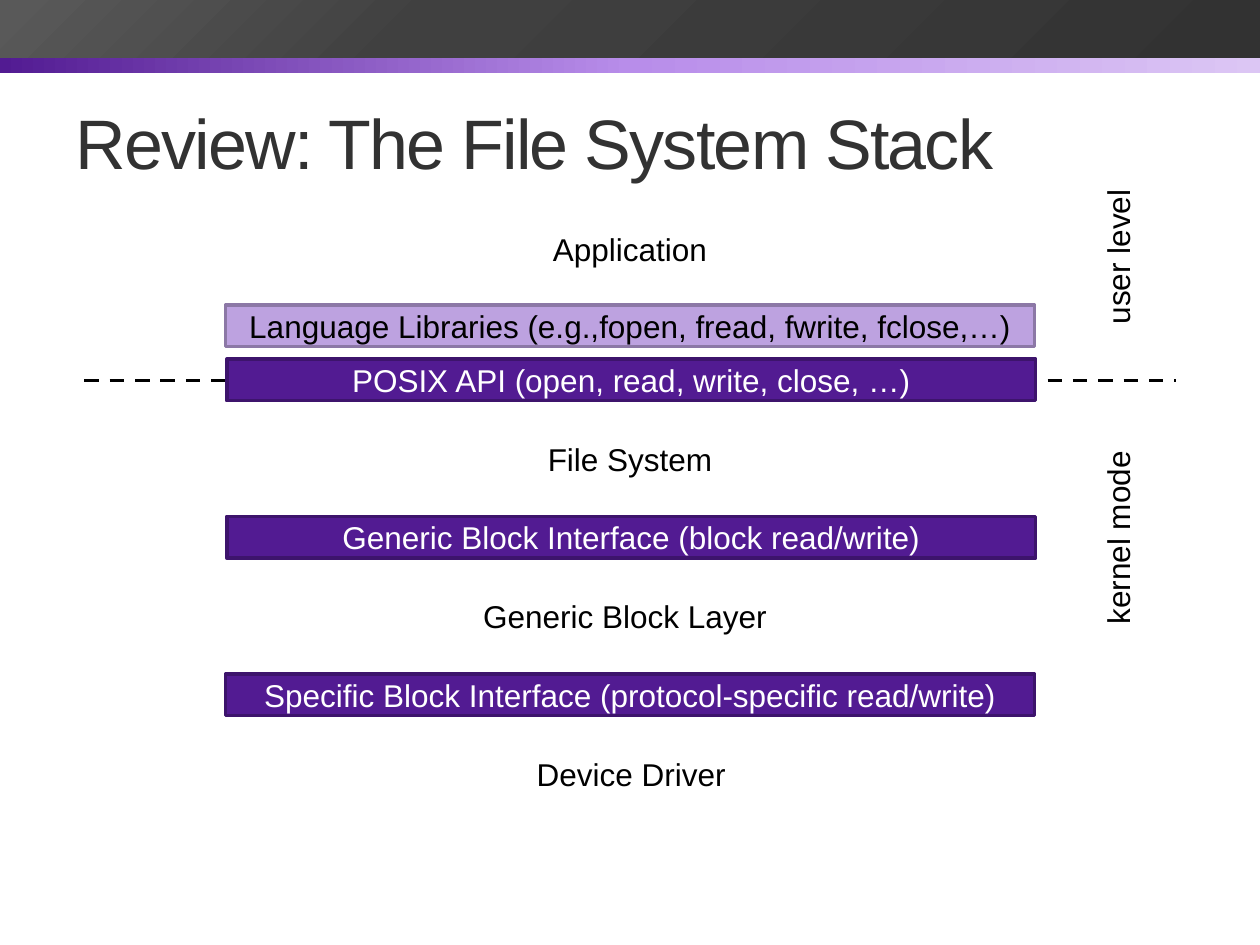
from typing import NamedTuple

from lxml import etree
from pptx import Presentation, util as u
from pptx.dml.color import RGBColor
from pptx.enum import dml, shapes, text
from pptx.oxml import parse_xml
from pptx.oxml.ns import nsdecls, qn

FONT = "Arial"
BLACK, WHITE, CHARCOAL = "000000", "FFFFFF", "323232"
PURPLE, DARK_PURPLE = "521B92", "3D146C"
LILAC, DARK_LILAC = "BDA2E0", "8C78A6"
LINE_WIDTH = u.Pt(2.08)
BAR_WIDTH, BAR_HEIGHT = 6.42, 0.33
LABEL_HEIGHT = 0.4


class Band(NamedTuple):
    top: float
    height: float
    angle: int
    stops: list[tuple[int, str]]


class Interface(NamedTuple):
    left: float
    top: float
    caption: str
    fill: str = PURPLE
    line: str = DARK_PURPLE
    color: str = WHITE


class Label(NamedTuple):
    center: float
    top: float
    width: float
    caption: str
    rotation: int = 0


BANDS = [
    Band(0.24, 0.34, 0, [(0, PURPLE), (50, "B88DEA"), (100, "DCC6F4")]),
    Band(0, 0.46, 225, [(0, CHARCOAL), (66, "404040"), (99, "595959")]),
]
INTERFACES = [
    Interface(1.8, 2.85, "POSIX API (open, read, write, close, …)"),
    Interface(1.8, 4.1, "Generic Block Interface (block read/write)"),
    Interface(1.79, 5.35, "Specific Block Interface (protocol-specific read/write)"),
    Interface(1.79, 2.42, "Language Libraries (e.g.,fopen, fread, fwrite, fclose,…)",
              LILAC, DARK_LILAC, BLACK),
]
LABELS = [
    Label(5, 1.78, 1.44, "Application"),
    Label(5, 3.44, 1.52, "File System"),
    Label(4.96, 4.69, 2.47, "Generic Block Layer"),
    Label(5.01, 5.94, 1.72, "Device Driver"),
    Label(8.87, 1.84, 1.28, "user level", 270),
    Label(8.87, 4.07, 1.59, "kernel mode", 270),
]


def rgb(color: str) -> RGBColor:
    return RGBColor.from_string(color)


def write(shape, caption: str, color: str, size: int = 18, align=text.PP_ALIGN.CENTER):
    """Put one formatted line in the shape and return its run."""
    shape.text_frame.text = caption
    paragraph = shape.text_frame.paragraphs[0]
    paragraph.alignment = align
    run = paragraph.runs[0]
    run.font.name = FONT
    run.font.size = u.Pt(size)
    run.font.color.rgb = rgb(color)
    return run


def add_rectangle(slide, left: float, top: float, width: float, height: float):
    shape = slide.shapes.add_shape(
        shapes.MSO_SHAPE.RECTANGLE,
        u.Inches(left), u.Inches(top), u.Inches(width), u.Inches(height))
    shape.shadow.inherit = False
    return shape


def add_band(slide, band: Band) -> None:
    shape = add_rectangle(slide, 0, band.top, 10, band.height)
    shape.line.fill.background()
    stops = "".join(
        f'<a:gs pos="{position * 1000}"><a:srgbClr val="{color}"/></a:gs>'
        for position, color in band.stops)
    gradient = parse_xml(
        f'<a:gradFill {nsdecls("a")} rotWithShape="1"><a:gsLst>{stops}</a:gsLst>'
        f'<a:lin ang="{band.angle * 60000}" scaled="0"/></a:gradFill>')
    shape._element.spPr.find(qn("a:prstGeom")).addnext(gradient)


def add_boundary(slide) -> None:
    """Draw the dashed line between user level and kernel mode."""
    y = u.Inches(3.02)
    line = slide.shapes.add_connector(
        shapes.MSO_CONNECTOR.STRAIGHT, u.Inches(0.67), y, u.Inches(9.33), y)
    line.line.color.rgb = rgb(BLACK)
    line.line.width = LINE_WIDTH
    line.line.dash_style = dml.MSO_LINE.DASH
    etree.SubElement(line._element.spPr, qn("a:effectLst"))


def add_title(slide, caption: str) -> None:
    box = slide.shapes.add_textbox(
        u.Inches(0.5), u.Inches(0.58), u.Inches(9), u.Inches(1.08))
    box.text_frame.word_wrap = True
    box.text_frame.vertical_anchor = text.MSO_ANCHOR.MIDDLE
    run = write(box, caption, CHARCOAL, 40, text.PP_ALIGN.LEFT)
    run.font._element.set("spc", "-100")


def add_interface(slide, interface: Interface) -> None:
    shape = add_rectangle(slide, interface.left, interface.top, BAR_WIDTH, BAR_HEIGHT)
    shape.fill.solid()
    shape.fill.fore_color.rgb = rgb(interface.fill)
    shape.line.color.rgb = rgb(interface.line)
    shape.line.width = LINE_WIDTH
    shape.text_frame.vertical_anchor = text.MSO_ANCHOR.MIDDLE
    write(shape, interface.caption, interface.color)


def add_label(slide, label: Label) -> None:
    box = slide.shapes.add_textbox(
        u.Inches(label.center - label.width / 2), u.Inches(label.top),
        u.Inches(label.width), u.Inches(LABEL_HEIGHT))
    box.rotation = label.rotation
    box.text_frame.word_wrap = False
    box.text_frame.auto_size = text.MSO_AUTO_SIZE.SHAPE_TO_FIT_TEXT
    write(box, label.caption, BLACK)


def main() -> None:
    presentation = Presentation()
    presentation.slide_width = u.Inches(10)
    presentation.slide_height = u.Inches(7.5)
    slide = presentation.slides.add_slide(presentation.slide_layouts[6])
    for band in BANDS:
        add_band(slide, band)
    add_boundary(slide)
    add_title(slide, "Review: The File System Stack")
    for interface in INTERFACES:
        add_interface(slide, interface)
    for label in LABELS:
        add_label(slide, label)
    presentation.save("out.pptx")


if __name__ == "__main__":
    main()
